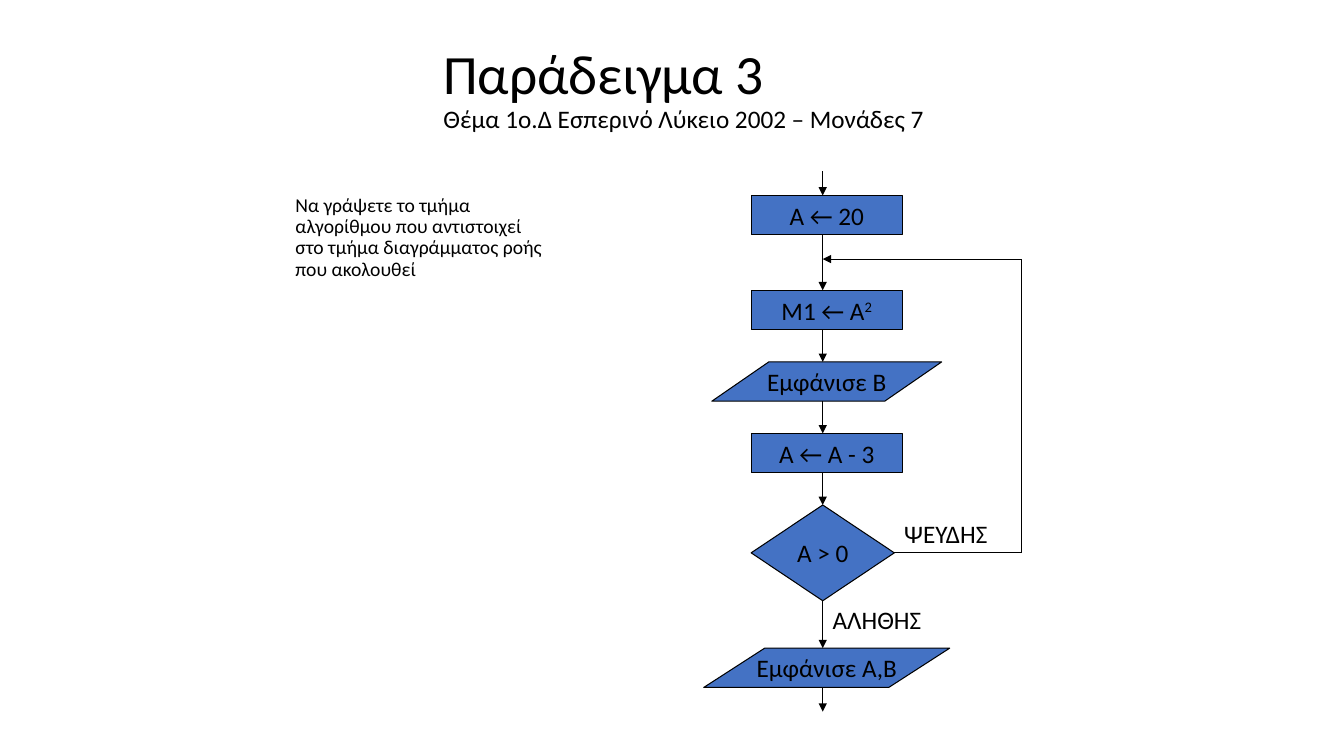
from dataclasses import dataclass
from itertools import pairwise

from lxml.etree import SubElement
from pptx import Presentation
from pptx.dml.color import RGBColor
from pptx.enum.shapes import MSO_CONNECTOR, MSO_SHAPE
from pptx.enum.text import MSO_ANCHOR as Anchor, PP_ALIGN as Align
from pptx.oxml.ns import qn
from pptx.shapes.autoshape import Shape
from pptx.shapes.connector import Connector
from pptx.slide import Slide
from pptx.text.text import TextFrame
from pptx.util import Inches, Pt


@dataclass(frozen=True)
class Theme:
    font: str = "Calibri"
    ink: RGBColor = RGBColor(0x00, 0x00, 0x00)
    fill: RGBColor = RGBColor(0x44, 0x72, 0xC4)
    title_size: float = 39.6
    text_size: float = 18
    task_size: float = 14
    line_width: float = 0.75
    line_spacing: float = 0.9


@dataclass(frozen=True)
class Step:
    text: str
    kind: MSO_SHAPE
    left: float
    top: float
    width: float
    height: float = 0.39
    slant: float | None = None
    superscript: str = ""

    @property
    def bottom(self) -> float:
        return self.top + self.height


@dataclass(frozen=True)
class Label:
    text: str
    left: float
    top: float


THEME = Theme()
PROCESS = MSO_SHAPE.FLOWCHART_PROCESS
DECISION = MSO_SHAPE.FLOWCHART_DECISION
OUTPUT = MSO_SHAPE.PARALLELOGRAM

FLOW_X = 8.16
LOOP_X = 10.13
LOOP_TOP = 2.57
END_ARROW = 0.24
TOP_SITE, BOTTOM_SITE, RIGHT_SITE = 0, 2, 3

STEPS = [
    Step("Α ← 20", PROCESS, 7.45, 1.94, 1.5),
    Step("Μ1 ← Α", PROCESS, 7.45, 2.88, 1.5, superscript="2"),
    Step("Εμφάνισε Β", OUTPUT, 7.06, 3.59, 2.28, slant=1.45),
    Step("Α ← Α - 3", PROCESS, 7.45, 4.3, 1.5),
    Step("Α > 0", DECISION, 7.45, 5.01, 1.42, height=0.95),
    Step("Εμφάνισε Α,Β", OUTPUT, 6.98, 6.43, 2.44, slant=1.55),
]
LABELS = [Label("ΑΛΗΘΗΣ", FLOW_X, 5.95), Label("ΨΕΥΔΗΣ", 8.87, 5.09)]


def format_text(frame: TextFrame, size: float) -> None:
    for paragraph in frame.paragraphs:
        for run in paragraph.runs:
            run.font.name = THEME.font
            run.font.size = Pt(size)
            run.font.color.rgb = THEME.ink


def add_text(slide: Slide, text: str, left: float, top: float, width: float,
             height: float, size: float) -> TextFrame:
    box = slide.shapes.add_textbox(Inches(left), Inches(top), Inches(width), Inches(height))
    frame = box.text_frame
    frame.word_wrap = True
    frame.text = text
    format_text(frame, size)
    return frame


def add_title(slide: Slide) -> None:
    frame = add_text(slide, "Παράδειγμα 3\vΘέμα 1ο.Δ Εσπερινό Λύκειο 2002 – Μονάδες 7",
                     4.3, 0.52, 9, 1.02, THEME.text_size)
    frame.vertical_anchor = Anchor.MIDDLE
    frame.margin_bottom = Inches(0.32)
    paragraph = frame.paragraphs[0]
    paragraph.line_spacing = THEME.line_spacing
    paragraph.runs[0].font.size = Pt(THEME.title_size)


def add_task(slide: Slide) -> None:
    frame = add_text(slide, "Να γράψετε το τμήμα αλγορίθμου που αντιστοιχεί "
                     "στο τμήμα διαγράμματος ροής που ακολουθεί",
                     2.25, 1.89, 3.23, 1.99, THEME.task_size)
    frame.margin_left = Inches(0.68)
    frame.paragraphs[0].line_spacing = THEME.line_spacing


def add_step(slide: Slide, step: Step) -> Shape:
    shape = slide.shapes.add_shape(step.kind, Inches(step.left), Inches(step.top),
                                   Inches(step.width), Inches(step.height))
    shape.shadow.inherit = False
    shape.fill.solid()
    shape.fill.fore_color.rgb = THEME.fill
    shape.line.color.rgb = THEME.ink
    shape.line.width = Pt(THEME.line_width)
    if step.slant is not None:
        shape.adjustments[0] = step.slant
    frame = shape.text_frame
    frame.text = step.text
    frame.word_wrap = False
    frame.vertical_anchor = Anchor.MIDDLE
    paragraph = frame.paragraphs[0]
    paragraph.alignment = Align.CENTER
    if step.superscript:
        run = paragraph.add_run()
        run.text = step.superscript
        run.font._element.set("baseline", "30000")
    format_text(frame, THEME.text_size)
    return shape


def add_line(slide: Slide, start: tuple[float, float], end: tuple[float, float],
             arrow: bool = True) -> Connector:
    line = slide.shapes.add_connector(MSO_CONNECTOR.STRAIGHT,
                                      *map(Inches, start), *map(Inches, end))
    line.line.color.rgb = THEME.ink
    line.line.width = Pt(THEME.line_width)
    properties = line._element.spPr
    if arrow:
        SubElement(properties.find(qn("a:ln")), qn("a:tailEnd"), type="triangle")
    SubElement(properties, qn("a:effectLst"))
    return line


def add_flow(slide: Slide, shapes: list[Shape]) -> None:
    """Draw the arrows down the chart, glued where they meet the decision."""
    first, last = STEPS[0], STEPS[-1]
    add_line(slide, (FLOW_X, first.top - END_ARROW), (FLOW_X, first.top))
    for (upper, upper_shape), (lower, lower_shape) in pairwise(zip(STEPS, shapes)):
        arrow = add_line(slide, (FLOW_X, upper.bottom), (FLOW_X, lower.top))
        if upper.kind == DECISION:
            arrow.begin_connect(upper_shape, BOTTOM_SITE)
        if lower.kind == DECISION:
            arrow.end_connect(lower_shape, TOP_SITE)
    add_line(slide, (FLOW_X, last.bottom), (FLOW_X, last.bottom + END_ARROW))


def add_loop(slide: Slide, shapes: list[Shape]) -> None:
    """Draw the branch from the decision back above the second step."""
    decision, shape = next(pair for pair in zip(STEPS, shapes) if pair[0].kind == DECISION)
    middle = decision.top + decision.height / 2
    corners = [(decision.left + decision.width, middle), (LOOP_X, middle),
               (LOOP_X, LOOP_TOP), (FLOW_X, LOOP_TOP)]
    lines = [add_line(slide, start, end, arrow=end == corners[-1])
             for start, end in pairwise(corners)]
    lines[0].begin_connect(shape, RIGHT_SITE)


def main() -> None:
    presentation = Presentation()
    presentation.slide_width = Inches(13.33)
    presentation.slide_height = Inches(7.5)
    slide = presentation.slides.add_slide(presentation.slide_layouts[6])
    add_title(slide)
    add_task(slide)
    shapes = [add_step(slide, step) for step in STEPS]
    add_flow(slide, shapes)
    add_loop(slide, shapes)
    for label in LABELS:
        add_text(slide, label.text, label.left, label.top, 1.26, 0.4, THEME.text_size)
    presentation.save("out.pptx")


if __name__ == "__main__":
    main()
